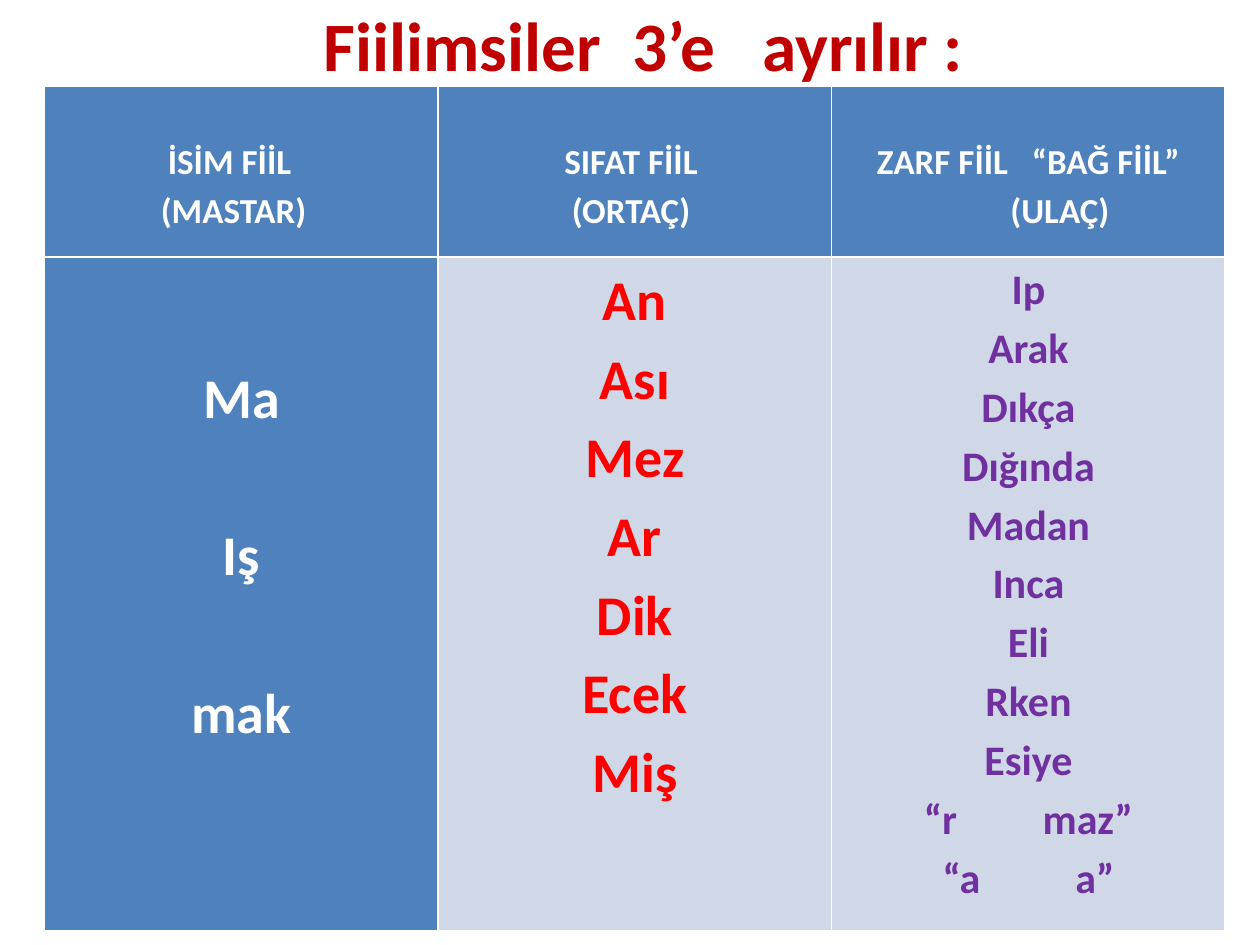
from pptx import Presentation
from pptx import util as u
from pptx.dml.color import RGBColor
from pptx.enum import text

WHITE = RGBColor(0xFF, 0xFF, 0xFF)
BLUE = RGBColor(0x4F, 0x81, 0xBD)
PALE = RGBColor(0xD0, 0xD8, 0xE8)
DARK_RED = RGBColor(0xC0, 0x00, 0x00)
RED = RGBColor(0xFF, 0x00, 0x00)
PURPLE = RGBColor(0x70, 0x30, 0xA0)

# Each line: text, left indent, right indent (points)
HEADERS = [
    [("İSİM FİİL", 0, 13.5), ("(MASTAR)", 4.5, 0)],
    [("SIFAT FİİL", 0, 4.5), ("(ORTAÇ)", 0, 0)],
    [("ZARF FİİL   “BAĞ FİİL”", 0, 0), ("(ULAÇ)", 36, 0)],
]
# Each column: suffixes, size, colour, fill, top margin, gap between lines (points)
SUFFIXES = [
    (["Ma", "Iş", "mak"], 32, WHITE, BLUE, 56, 45),
    (["An", "Ası", "Mez", "Ar", "Dik", "Ecek", "Miş"], 32, RED, PALE, 0, 0),
    (["Ip", "Arak", "Dıkça", "Dığında", "Madan", "Inca", "Eli", "Rken",
      "Esiye", "“r         maz”", "“a          a”"], 24, PURPLE, PALE, 0, 0),
]


def set_attrs(obj, values):
    for name, value in values.items():
        setattr(obj, name, value)


def add_line(p, line, size, color):
    r = p.add_run()
    r.text = line
    set_attrs(r.font, {"name": "Calibri", "size": u.Pt(size), "bold": True})
    r.font.color.rgb = color
    p.alignment = text.PP_ALIGN.CENTER


def place_title(sp, left, top, width, height):
    set_attrs(sp, {"left": left, "top": top, "width": width, "height": height})
    tf = sp.text_frame
    set_attrs(tf, {"auto_size": text.MSO_AUTO_SIZE.NONE, "word_wrap": True,
                   "vertical_anchor": text.MSO_ANCHOR.MIDDLE,
                   "margin_bottom": u.Cm(1.83)})
    add_line(tf.paragraphs[0], "Fiilimsiler  3’e   ayrılır :", 39.6, DARK_RED)


def fill_cell(cell, lines, size, color, fill, top, gap):
    cell.fill.solid()
    cell.fill.fore_color.rgb = fill
    set_attrs(cell, {"margin_left": u.Cm(0.19), "margin_right": u.Cm(0.19),
                     "margin_top": u.Pt(top), "margin_bottom": 0,
                     "vertical_anchor": text.MSO_ANCHOR.TOP})
    tf = cell.text_frame
    for i, (line, left, right) in enumerate(lines):
        p = tf.add_paragraph() if i else tf.paragraphs[0]
        add_line(p, line, size, color)
        p.line_spacing = 1.15
        p.space_before = u.Pt(gap if i else 0)
        pPr = p._p.get_or_add_pPr()
        for side, indent in (("marL", left), ("marR", right)):
            if indent:
                pPr.set(side, str(u.Pt(indent)))


def place_table(slide, left, top, width, height):
    table = slide.shapes.add_table(2, 3, left, top, width, height).table
    set_attrs(table, {"first_row": True, "first_col": True, "horz_banding": False})
    header_height = u.Cm(3.45)
    table.rows[0].height = header_height
    table.rows[1].height = height - header_height
    for col, (header, (words, *style)) in enumerate(zip(HEADERS, SUFFIXES)):
        fill_cell(table.cell(0, col), header, 20, WHITE, BLUE, 28, 0)
        fill_cell(table.cell(1, col), [(word, 0, 0) for word in words], *style)


def main():
    prs = Presentation()
    set_attrs(prs, {"slide_width": u.Cm(25.4), "slide_height": u.Cm(19.05)})
    slide = prs.slides.add_slide(prs.slide_layouts[5])
    place_title(slide.shapes.title, u.Cm(1.27), u.Cm(0.53), u.Cm(23.42), u.Cm(2.39))
    place_table(slide, u.Cm(0.9), u.Cm(1.73), u.Cm(23.8), u.Cm(17.04))
    prs.save("out.pptx")


if __name__ == "__main__":
    main()
